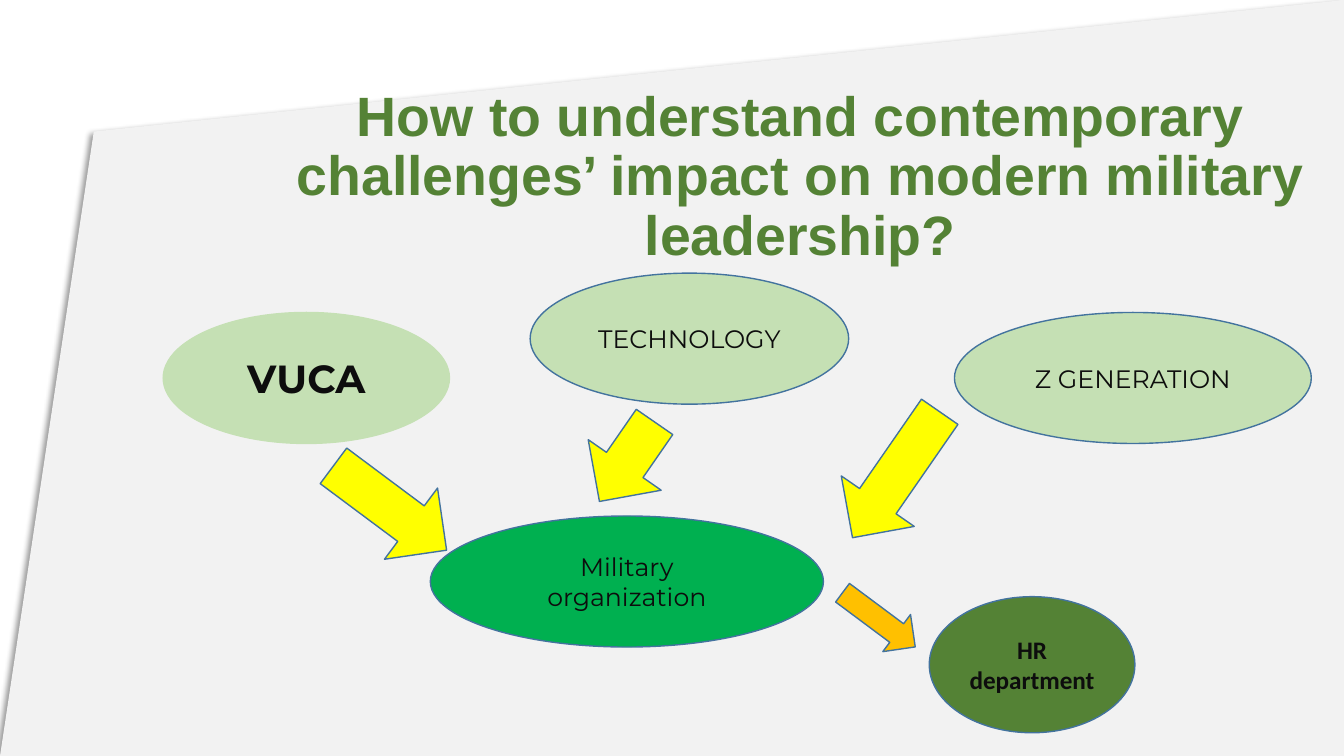
from lxml.etree import SubElement
from pptx import Presentation
from pptx.dml.color import RGBColor
from pptx.enum.shapes import MSO_SHAPE
from pptx.enum.text import MSO_ANCHOR, MSO_AUTO_SIZE, PP_ALIGN
from pptx.oxml.ns import qn
from pptx.util import Pt

WIDTH, HEIGHT = 960, 540
BLACK = RGBColor(0x00, 0x00, 0x00)
INK = RGBColor(0x0D, 0x0D, 0x0D)
PANEL = RGBColor(0xF2, 0xF2, 0xF2)
OUTLINE = RGBColor(0x43, 0x73, 0x9E)
PALE_GREEN = RGBColor(0xC5, 0xE0, 0xB4)
GREEN = RGBColor(0x00, 0xB0, 0x50)
DARK_GREEN = RGBColor(0x54, 0x82, 0x35)
YELLOW = RGBColor(0xFF, 0xFF, 0x00)
ORANGE = RGBColor(0xFF, 0xC0, 0x00)


class Deck:
    def __init__(self):
        self.prs = Presentation()
        self.prs.slide_width, self.prs.slide_height = Pt(WIDTH), Pt(HEIGHT)
        self.slide = self.prs.slides.add_slide(self.prs.slide_layouts[5])

    def set_text(self, sp, text, font, size, color, bold):
        tf = sp.text_frame
        tf.text = text
        tf.word_wrap = True
        tf.auto_size = MSO_AUTO_SIZE.NONE
        tf.vertical_anchor = MSO_ANCHOR.MIDDLE
        p = tf.paragraphs[0]
        p.alignment = PP_ALIGN.CENTER
        r = p.runs[0]
        r.font.name, r.font.size, r.font.bold = font, Pt(size), bold
        r.font.color.rgb = color
        return p

    def panel(self, points):
        """Draw the slanted backdrop, with a soft shadow, behind everything else."""
        builder = self.slide.shapes.build_freeform(*points[0], scale=Pt(1))
        builder.add_line_segments(points[1:], close=True)
        sp = builder.convert_to_shape()
        sp.fill.solid()
        sp.fill.fore_color.rgb = PANEL
        sp.line.fill.background()
        sp.shadow.inherit = False
        effects = sp._element.spPr.find(qn("a:effectLst"))
        shadow = SubElement(effects, qn("a:outerShdw"), blurRad=str(Pt(4)),
                            dist=str(Pt(3)), dir=str(135 * 60000),
                            algn="tr", rotWithShape="0")
        color = SubElement(shadow, qn("a:srgbClr"), val=str(BLACK))
        SubElement(color, qn("a:alpha"), val="40000")
        self.slide.shapes._spTree.insert(2, sp._element)

    def title(self, text, left, top, width, height):
        sp = self.slide.shapes.title
        sp.left, sp.top, sp.width, sp.height = map(Pt, (left, top, width, height))
        p = self.set_text(sp, text, "Arial", 39.6, DARK_GREEN, True)
        p.line_spacing = 0.9

    def shape(self, kind, box, fill, line=OUTLINE):
        sp = self.slide.shapes.add_shape(kind, *map(Pt, box))
        sp.shadow.inherit = False
        sp.fill.solid()
        sp.fill.fore_color.rgb = fill
        sp.line.color.rgb = line
        sp.line.width = Pt(1)
        return sp

    def ellipse(self, text, box, fill, line=OUTLINE, font="Montserrat", size=18, bold=False):
        sp = self.shape(MSO_SHAPE.OVAL, box, fill, line)
        self.set_text(sp, text, font, size, INK, bold)

    def arrow(self, box, rotation, fill):
        self.shape(MSO_SHAPE.RIGHT_ARROW, box, fill).rotation = rotation


def main():
    deck = Deck()
    deck.panel([(67, 94.3), (WIDTH, 0), (WIDTH, HEIGHT), (0, HEIGHT)])
    deck.title("How to understand contemporary challenges’ impact on modern "
               "military leadership?", 173.5, 74.9, 796.3, 104.4)

    deck.ellipse("VUCA", (116.6, 223.2, 204.5, 93.6), PALE_GREEN,
                 line=PALE_GREEN, size=28, bold=True)
    deck.ellipse("TECHNOLOGY", (378.7, 195.1, 227.5, 93.6), PALE_GREEN)
    deck.ellipse("Z GENERATION", (681.8, 223.2, 254.9, 93.6), PALE_GREEN)
    deck.ellipse("Military organization", (307.4, 368.6, 280.8, 93.6), GREEN)
    deck.ellipse("HR department", (663.8, 426.2, 146.9, 97.2), DARK_GREEN,
                 font="Calibri", bold=True)

    down_right, down_left = 36.7, 124.7
    deck.arrow((228.2, 331.2, 100.8, 63.4), down_right, YELLOW)
    deck.arrow((413.3, 298.1, 69.1, 63.4), down_left, YELLOW)
    deck.arrow((585.4, 307.4, 109.4, 63.4), down_left, YELLOW)
    deck.arrow((595.4, 426.2, 64.8, 33.1), down_right, ORANGE)
    deck.prs.save("out.pptx")


if __name__ == "__main__":
    main()
